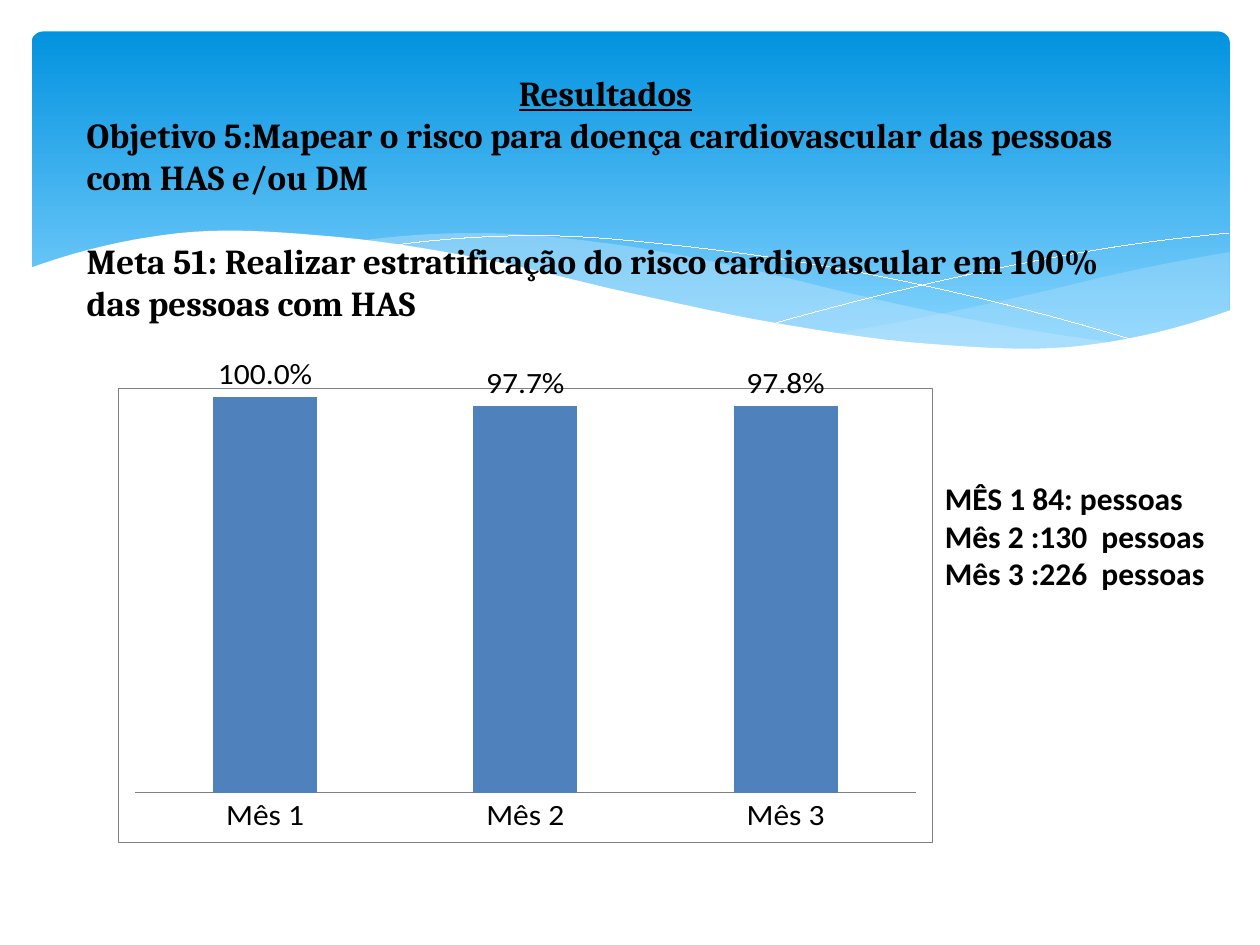
from lxml import etree
from pptx import Presentation
from pptx import util as u
from pptx.chart.data import CategoryChartData
from pptx.dml.color import RGBColor
from pptx.enum import chart as ch, shapes, text
from pptx.oxml import parse_xml
from pptx.oxml.ns import nsdecls, qn

INK = {"sky": "0293E0", "pale": "83D3FE", "mist": "C6E7FC", "white": "FFFFFF",
       "black": "000000", "gray": "808080", "bar": "4F81BD"}
COLS, ROWS = 100, 75  # grid cells of a tenth of an inch
STEPS = 10            # straight pieces between two knots of a curve
HAIR, THIN = u.Pt(0.01), u.Pt(0.25)


def rgb(name):
    return RGBColor.from_string(INK[name])


def cell(*nums):
    return [u.Inches(n / 10) for n in nums]


def curve(left, right, knots):
    """Smooth (column, row) points through knot rows at equal column gaps."""
    gap = (right - left) / (len(knots) - 1)
    # A ghost knot at each end carries the bend on past the curve
    first = 3 * knots[0] - 3 * knots[1] + knots[2]
    last = 3 * knots[-1] - 3 * knots[-2] + knots[-3]
    rows = [first, *knots, last]
    pts = []
    for i, (a, b, c, d) in enumerate(zip(rows, rows[1:], rows[2:], rows[3:])):
        for step in range(STEPS):
            t = step / STEPS
            row = b + t / 2 * (c - a + t * (2 * a - 5 * b + 4 * c - d
                                            + t * (3 * (b - c) + d - a)))
            pts.append((left + (i + t) * gap, row))
    return pts + [(right, knots[-1])]


def draw(slide, pts, closed):
    """Freeform through grid points, without shadow."""
    start, *rest = [cell(*p) for p in pts]
    pen = slide.shapes.build_freeform(*start)
    pen.add_line_segments(rest, close=closed)
    shape = pen.convert_to_shape()
    shape.shadow.inherit = False
    return shape


def ribbon(slide, top, base, ink, alpha=100):
    """Filled area between a top and a base outline, alpha in percent."""
    shape = draw(slide, top + base[::-1], True)
    shape.line.fill.background()
    shape.fill.solid()
    shape.fill.fore_color.rgb = rgb(ink)
    tint = shape.fill._xPr.find(".//" + qn("a:srgbClr"))
    etree.SubElement(tint, qn("a:alpha")).set("val", str(alpha * 1000))


def thread(slide, pts):
    """Open white hairline."""
    shape = draw(slide, pts, False)
    shape.fill.background()
    edge(shape.line, "white", HAIR)


def edge(line, ink, width):
    line.color.rgb = rgb(ink)
    line.width = width


def band(slide, box):
    """Rounded header panel with a vertical gradient."""
    panel = slide.shapes.add_shape(shapes.MSO_SHAPE.ROUNDED_RECTANGLE, *cell(*box))
    panel.adjustments[0] = 0.034
    panel.shadow.inherit = False
    panel.line.fill.background()
    panel.fill.gradient()
    panel.fill.gradient_angle = 270
    for stop, name, pos in zip(panel.fill.gradient_stops, ("sky", "pale"), (0, 0.9)):
        stop.color.rgb = rgb(name)
        stop.position = pos


def header(slide):
    """Blue panel, two misty ribbons, two threads and the white front wave."""
    band(slide, (2.5, 2.5, 95.1, 27))

    left, right = 66.1, 97.6  # ribbon that rises to the right
    ribbon(slide, curve(left, right, [26.5, 25.05, 23.35, 21.5, 20]),
           curve(left, right, [26.5, 27.4, 27.8, 27.05, 24.7]), "mist", 29)

    left, right = 28.6, 89.3  # ribbon that falls from the left
    ribbon(slide, curve(left, right, [19.1, 18.5, 19.4, 21.25, 23.65, 25.75, 27.3]),
           curve(left, right, [19.1, 20.75, 23.15, 25.25, 26.95, 27.8, 27.3]), "mist", 40)

    thread(slide, curve(30.9, 90.7, [19.5, 18.7, 19.6, 21.35, 23.9, 27.2]))
    thread(slide, curve(61.3, 97.5, [25.7, 23.3, 21.25, 19.6, 18.5]))

    left, right, floor = 2.3, 97.7, 32.9  # white wave that hides the panel's foot
    crest = curve(left, right, [21.3, 18.5, 18.75, 20.5, 23.25, 25.7, 27.3, 27.45, 24.6])
    ribbon(slide, crest, [(left, floor), (right, floor)], "white")


def style(font, size, face="Calibri", bold=False):
    font.size, font.name, font.bold = u.Pt(size), face, bold
    font.color.rgb = rgb("black")


def note(slide, box, lines, size, face):
    """Bold text box, one paragraph for each line."""
    frame = slide.shapes.add_textbox(*cell(*box)).text_frame
    frame.word_wrap = True
    frame.text = "\n".join(lines)
    for para in frame.paragraphs:
        for run in para.runs:
            style(run.font, size, face, True)
    return frame.paragraphs


def axes(chart):
    """Plain month axis; hidden share axis from 0 to 1."""
    months, scale = chart.category_axis, chart.value_axis
    months.major_tick_mark = ch.XL_TICK_MARK.NONE
    style(months.tick_labels.font, 18)
    edge(months.format.line, "gray", THIN)
    scale.minimum_scale, scale.maximum_scale, scale.major_unit = 0, 1, 0.1
    scale.has_major_gridlines = scale.visible = False


def columns(plot):
    """Column colour, gaps and value labels."""
    plot.gap_width, plot.overlap, plot.vary_by_categories = 150, -25, False
    fill = plot.series[0].format.fill
    fill.solid()
    fill.fore_color.rgb = rgb("bar")
    plot.has_data_labels = True
    tags = plot.data_labels
    tags.show_value = True
    tags.number_format, tags.number_format_is_linked = "0.0%", False
    tags.position = ch.XL_LABEL_POSITION.OUTSIDE_END
    style(tags.font, 18)


def frame_chart(chart, **spots):
    """Inner plot area as shares of the chart, then background and border."""
    root = chart._chartSpace.chart
    for old in root.plotArea.findall(qn("c:layout")):
        root.plotArea.remove(old)
    modes = {"layoutTarget": "inner", "xMode": "edge", "yMode": "edge"}
    marks = "".join(f'<c:{key} val="{val}"/>' for key, val in {**modes, **spots}.items())
    root.plotArea.insert(0, parse_xml(
        f'<c:layout {nsdecls("c")}><c:manualLayout>{marks}</c:manualLayout></c:layout>'))

    paint = '<a:solidFill><a:srgbClr val="{}"/></a:solidFill>'.format
    root.addnext(parse_xml(
        f'<c:spPr {nsdecls("c", "a")}>{paint(INK["white"])}'
        f'<a:ln w="{THIN}">{paint(INK["gray"])}</a:ln></c:spPr>'))


def bars(slide, box, cats, vals):
    """Column chart of monthly shares."""
    data = CategoryChartData(number_format="0.0%")
    data.categories = cats
    data.add_series("Series 1", vals)
    chart = slide.shapes.add_chart(ch.XL_CHART_TYPE.COLUMN_CLUSTERED, *cell(*box), data).chart
    chart.has_legend = chart.has_title = False
    style(chart.font, 10)
    axes(chart)
    columns(chart.plots[0])
    frame_chart(chart, x=0.02, y=0.02, w=0.96, h=0.87)


def main():
    deck = Presentation()
    deck.slide_width, deck.slide_height = cell(COLS, ROWS)
    slide = deck.slides.add_slide(deck.slide_layouts[6])
    header(slide)

    # Heading, objective and goal
    head, _, goal = note(slide, (5.9, 5.2, 84.3, 21.2), [
        "Resultados",
        "Objetivo 5:Mapear o risco para doença cardiovascular das pessoas com HAS e/ou DM",
        "Meta 51: Realizar estratificação do risco cardiovascular em 100% das pessoas com HAS",
    ], 20, "Cambria")
    head.alignment = text.PP_ALIGN.CENTER
    head.runs[0].font.underline = True
    goal.space_before = u.Pt(24)  # one line

    # Monthly counts beside the chart
    split = 74
    note(slide, (split, 37.5, COLS - split, 10.1), [
        "MÊS 1 84: pessoas", "Mês 2 :130  pessoas", "Mês 3 :226  pessoas"], 18, "Calibri")
    left = 9.4
    bars(slide, (left, 28.3, split - left, 38.6),
         [f"Mês {n}" for n in (1, 2, 3)], [1, 0.977, 0.978])

    deck.save("out.pptx")


if __name__ == "__main__":
    main()
